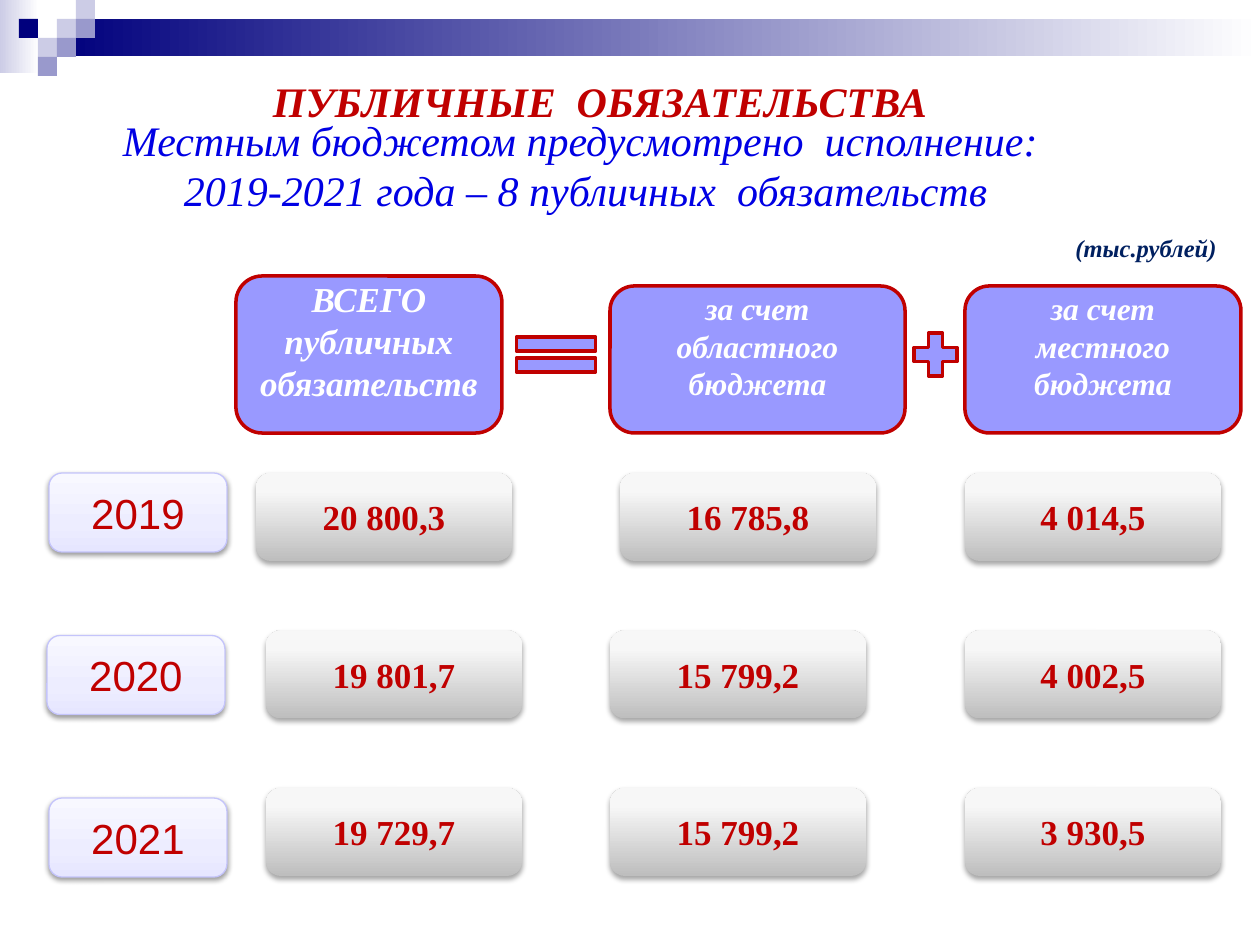
from lxml.etree import SubElement
from pptx import Presentation
from pptx.dml.color import RGBColor
from pptx.enum.shapes import MSO_SHAPE
from pptx.enum.text import MSO_ANCHOR, MSO_AUTO_SIZE, PP_ALIGN
from pptx.oxml.ns import qn
from pptx.util import Emu, Pt

PX = 914400 / 126
COLORS = {
    "red": "C00000", "blue": "0000E4", "navy": "00007D", "unit": "002060",
    "white": "FFFFFF", "header": "9999FF", "pale": "CCCCE6", "mid": "9999CC",
    "year line": "C4C4FB",
}
HORIZONTAL, UPWARD = 0, 270
YEAR_STOPS = [(0, "E6E6FF"), (35, "EDEDFF"), (100, "F8F8FF")]
VALUE_STOPS = [(0, "BEBEBE"), (80, "F7F7F7"), (100, "F8F8F8")]
SERIF = {"name": "Times New Roman", "bold": True, "italic": True}
HEADER_BOTTOM_INSET = 34


def add_box(kind, box, fill, line=None, width=0, angle=UPWARD, shadow=None):
    """fill is a colour name or gradient stops; shadow is (opacity, distance)."""
    shape = slide.shapes.add_shape(kind, *[Emu(round(v * PX)) for v in box])
    shape.shadow.inherit = False
    if isinstance(fill, str):
        shape.fill.solid()
        shape.fill.fore_color.rgb = RGBColor.from_string(COLORS[fill])
    else:
        shape.fill.gradient()
        gradient = shape._element.spPr.find(qn("a:gradFill"))
        stops = gradient.find(qn("a:gsLst"))
        for stop in list(stops):
            stops.remove(stop)
        for position, color in fill:
            stop = SubElement(stops, qn("a:gs"), pos=str(position * 1000))
            SubElement(stop, qn("a:srgbClr"), val=color)
        gradient.find(qn("a:lin")).set("ang", str(angle * 60000))
    if line:
        shape.line.color.rgb = RGBColor.from_string(COLORS[line])
        shape.line.width = Pt(width)
    else:
        shape.line.fill.background()
    if shadow:
        opacity, distance = shadow
        effects = shape._element.spPr.find(qn("a:effectLst"))
        outer = SubElement(effects, qn("a:outerShdw"), blurRad=str(Pt(3.1)),
                           dist=str(Pt(distance)), dir="5400000", rotWithShape="0")
        color = SubElement(outer, qn("a:srgbClr"), val="000000")
        SubElement(color, qn("a:alpha"), val=str(opacity * 1000))
    return shape


def write(shape, lines, size, color, font, anchor=MSO_ANCHOR.MIDDLE,
          align=PP_ALIGN.CENTER, wrap=True):
    frame = shape.text_frame
    frame.auto_size = MSO_AUTO_SIZE.NONE
    frame.word_wrap = wrap
    frame.vertical_anchor = anchor
    frame.text = "\n".join(lines)
    for paragraph in frame.paragraphs:
        paragraph.alignment = align
        for run in paragraph.runs:
            for name, value in {**font, "size": Pt(size)}.items():
                setattr(run.font, name, value)
            run.font.color.rgb = RGBColor.from_string(COLORS[color])


presentation = Presentation()
presentation.slide_width = Emu(round(1260 * PX))
presentation.slide_height = Emu(round(945 * PX))
slide = presentation.slides.add_slide(presentation.slide_layouts[5])

# Top band and its checkered corner
for box, start in [((0, 0, 39, 73), "pale"), ((57, 19, 1203, 37), "navy")]:
    add_box(MSO_SHAPE.RECTANGLE, box, [(0, COLORS[start]), (100, COLORS["white"])],
            angle=HORIZONTAL)
for column, row, color in [(3, 1, "pale"), (4, 0, "pale"), (4, 1, "mid"), (2, 2, "pale"),
                           (1, 1, "navy"), (3, 2, "mid"), (2, 3, "mid")]:
    add_box(MSO_SHAPE.RECTANGLE, (column * 19, row * 19, 19, 19), color)

# Headings
title = slide.shapes.title
for name, value in {"left": 108, "top": 69, "width": 984, "height": 63}.items():
    setattr(title, name, Emu(round(value * PX)))
write(title, ["ПУБЛИЧНЫЕ  ОБЯЗАТЕЛЬСТВА"], 24, "red", SERIF, MSO_ANCHOR.TOP)

subtitle = slide.shapes.add_textbox(*[Emu(round(v * PX)) for v in (20, 108, 1131, 115)])
write(subtitle, ["Местным бюджетом предусмотрено  исполнение: ",
                 "2019-2021 года – 8 публичных  обязательств"],
      24, "blue", {**SERIF, "bold": False}, MSO_ANCHOR.TOP)

unit = slide.shapes.add_textbox(*[Emu(round(v * PX)) for v in (1063, 227, 168, 43)])
write(unit, ["(тыс.рублей)"], 14, "unit", SERIF, MSO_ANCHOR.TOP, PP_ALIGN.LEFT, False)

# Total = regional budget + local budget
headers = [
    ((236, 276, 266, 157), 20, ["ВСЕГО", "публичных", "обязательств"]),
    ((610, 286, 295, 147), 18, ["за счет областного бюджета"]),
    ((965, 286, 276, 147), 18, ["за счет местного", "бюджета"]),
]
for box, size, lines in headers:
    header = add_box(MSO_SHAPE.ROUNDED_RECTANGLE, box, "header", "red", 2)
    write(header, lines, size, "white", SERIF)
    header.text_frame.margin_bottom = Emu(round(HEADER_BOTTOM_INSET * PX))
add_box(MSO_SHAPE.MATH_EQUAL, (502, 325, 108, 59), "header", "red", 2)
add_box(MSO_SHAPE.MATH_PLUS, (906, 325, 59, 59), "header", "red", 2)

# One row per year: year position, value positions, values
rows = [
    ("2019", 49, (256, 620, 965), ("20 800,3", "16 785,8", "4 014,5")),
    ("2020", 47, (266, 610, 965), ("19 801,7", "15 799,2", "4 002,5")),
    ("2021", 49, (266, 610, 965), ("19 729,7", "15 799,2", "3 930,5")),
]
for index, (year, year_left, lefts, values) in enumerate(rows):
    year_box = add_box(MSO_SHAPE.ROUNDED_RECTANGLE, (year_left, 473 + index * 162.5, 178, 79),
                       YEAR_STOPS, "year line", 0.75, shadow=(38, 1.6))
    write(year_box, [year], 24, "red", {"name": "Arial"})
    for left, value in zip(lefts, values):
        value_box = add_box(MSO_SHAPE.ROUNDED_RECTANGLE, (left, 473 + index * 157.5, 256, 88),
                            VALUE_STOPS, shadow=(35, 1.8))
        write(value_box, [value], 20, "red", {**SERIF, "italic": False})

presentation.save("out.pptx")
